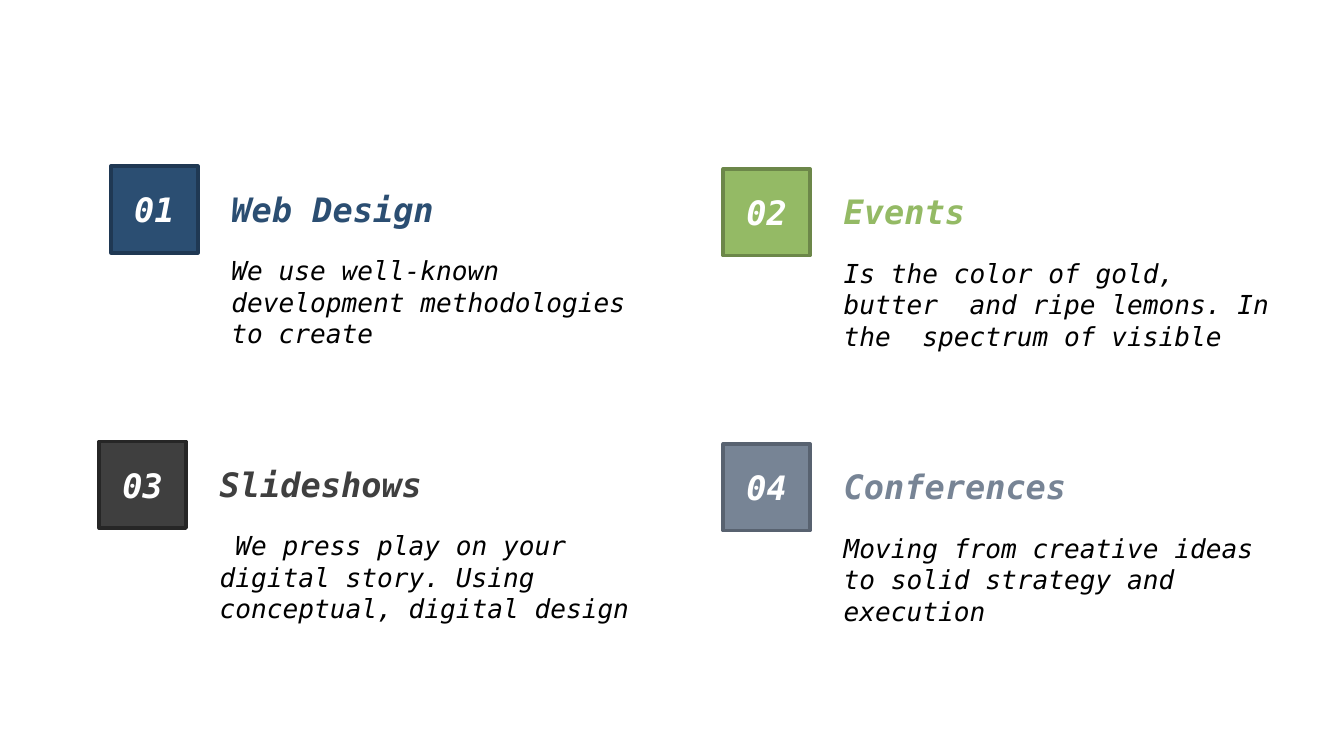
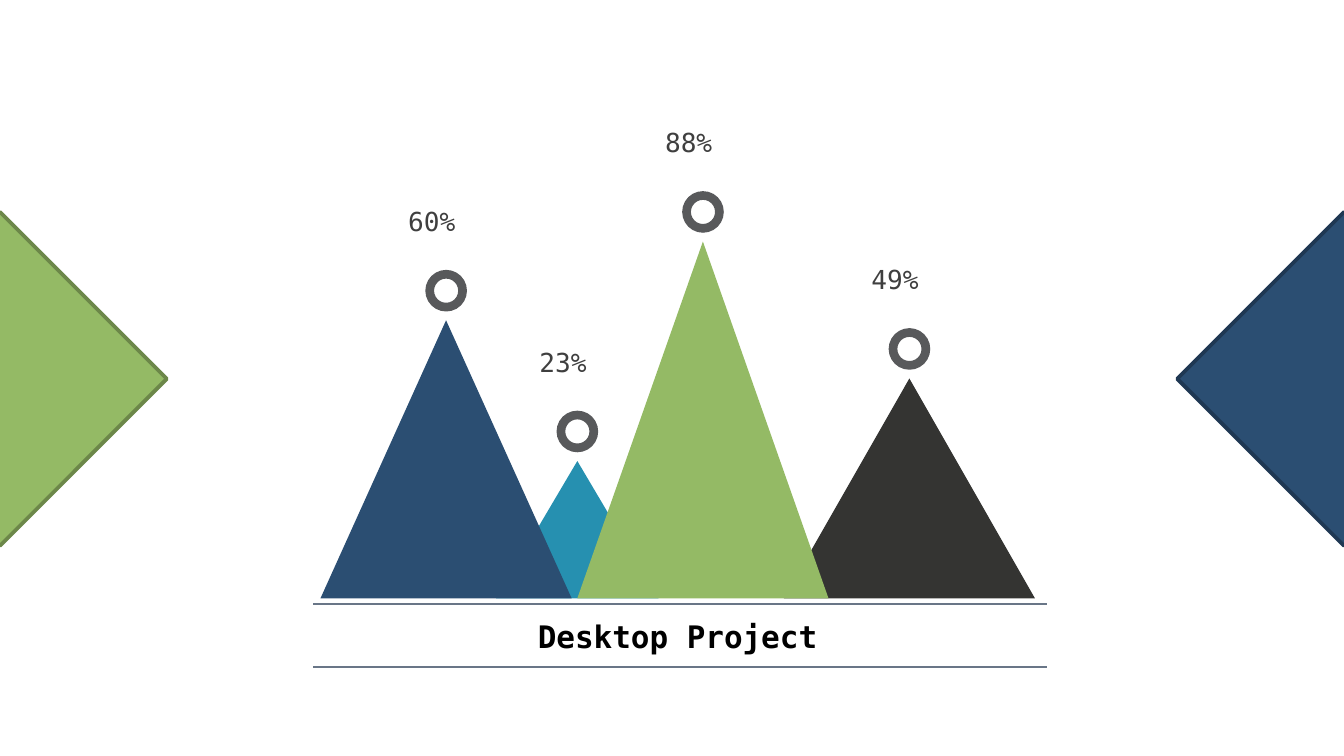
"""Build two slides: four numbered service cards and a peak diagram."""
import dataclasses

import pptx
import pptx.dml.color
import pptx.enum.shapes
import pptx.enum.text
import pptx.oxml.ns
import pptx.util
from lxml import etree

Pt = pptx.util.Pt
MSO_SHAPE = pptx.enum.shapes.MSO_SHAPE
MSO_ANCHOR = pptx.enum.text.MSO_ANCHOR
PP_ALIGN = pptx.enum.text.PP_ALIGN


@dataclasses.dataclass(frozen=True)
class Theme:
    font: str = "DejaVu Sans Mono"
    white: str = "FFFFFF"
    black: str = "000000"
    navy: str = "2B4E72"
    navy_edge: str = "1F3853"
    green: str = "94BA65"
    green_edge: str = "6C8749"
    gray: str = "3F3F3F"
    gray_edge: str = "262626"
    slate: str = "778495"
    slate_edge: str = "586270"
    teal: str = "2690B0"
    charcoal: str = "343432"
    ring: str = "58595B"
    rule: str = "697687"
    heading: float = 18
    caption: float = 16.6
    body: float = 14


def rgb(color):
    return pptx.dml.color.RGBColor.from_string(color)


def write(tf, text, font, size, color, bold=False, italic=False,
          align=PP_ALIGN.LEFT, anchor=MSO_ANCHOR.TOP, spacing=None):
    tf.word_wrap = True
    tf.vertical_anchor = anchor
    p = tf.paragraphs[0]
    p.alignment = align
    p.line_spacing = spacing
    r = p.add_run()
    r.text = text
    r.font.name = font
    r.font.size = Pt(size)
    r.font.color.rgb = rgb(color)
    r.font.bold = bold
    r.font.italic = italic


class Deck:
    def __init__(self, theme):
        self.theme = theme
        self.prs = pptx.Presentation()
        self.prs.slide_width = Pt(720)
        self.prs.slide_height = Pt(405)
        self.s = None

    def slide(self):
        self.s = self.prs.slides.add_slide(self.prs.slide_layouts[6])

    def shape(self, kind, x, y, w, h, fill, edge=None):
        sp = self.s.shapes.add_shape(kind, Pt(x), Pt(y), Pt(w), Pt(h))
        sp.shadow.inherit = False
        sp.fill.solid()
        sp.fill.fore_color.rgb = rgb(fill)
        if edge:
            sp.line.color.rgb = rgb(edge)
            sp.line.width = Pt(2)
        else:
            sp.line.fill.background()
        return sp

    def text(self, x, y, w, h, text, size, color, **fmt):
        sp = self.s.shapes.add_textbox(Pt(x), Pt(y), Pt(w), Pt(h))
        write(sp.text_frame, text, self.theme.font, size, color, **fmt)

    def rule(self, x1, x2, y):
        sp = self.s.shapes.add_connector(
            pptx.enum.shapes.MSO_CONNECTOR.STRAIGHT, Pt(x1), Pt(y), Pt(x2), Pt(y))
        sp.line.color.rgb = rgb(self.theme.rule)
        sp.line.width = Pt(1)
        etree.SubElement(sp._element.spPr, pptx.oxml.ns.qn("a:effectLst"))

    def card(self, x, y, number, title, body, lines, color, edge):
        t = self.theme
        sp = self.shape(MSO_SHAPE.RECTANGLE, x, y, 46.4, 46.4, color, edge)
        write(sp.text_frame, number, t.font, t.heading, t.white, bold=True,
              italic=True, align=PP_ALIGN.CENTER, anchor=MSO_ANCHOR.MIDDLE)
        self.text(x + 57.4, y + 8.4, 215, 29, title, t.heading, color,
                  bold=True, italic=True)
        self.text(x + 57.4, y + 43.8, 249, 7.2 + 17 * lines, body, t.body,
                  t.black, italic=True)

    def peak(self, cx, top, base, width, label, color):
        t, ring = self.theme, 22.3
        self.text(cx - 27.4, top - 65, 55, 29, label, t.body, t.gray)
        sp = self.shape(MSO_SHAPE.DONUT, cx - ring / 2, top - 27, ring, ring, t.ring)
        sp.adjustments[0] = 0.21
        self.shape(MSO_SHAPE.ISOSCELES_TRIANGLE, cx - width / 2, top, width,
                   base - top, color)

    def diamond(self, cx, cy, side, color, edge):
        sp = self.shape(MSO_SHAPE.RECTANGLE, cx - side / 2, cy - side / 2,
                        side, side, color, edge)
        sp.rotation = 45


def services(deck):
    t = deck.theme
    deck.slide()
    deck.card(59.5, 89, "01", "Web Design",
              "We use well-known development methodologies to create",
              2, t.navy, t.navy_edge)
    deck.card(387.5, 90.5, "02", "Events",
              "Is the color of gold, butter  and ripe lemons. In the  spectrum of visible",
              3, t.green, t.green_edge)
    deck.card(53.2, 236.5, "03", "Slideshows",
              " We press play on your digital story. Using conceptual, digital design",
              3, t.gray, t.gray_edge)
    deck.card(387.5, 237.8, "04", "Conferences",
              "Moving from creative ideas to solid strategy and execution",
              2, t.slate, t.slate_edge)


def project(deck):
    t = deck.theme
    deck.slide()
    for cx, top, width, label, color in (
            (309.3, 247, 87, "23%", t.teal),
            (487.2, 202.8, 134.6, "49%", t.charcoal),
            (239, 171.6, 134.6, "60%", t.navy),
            (376.6, 129.4, 134.6, "88%", t.green)):
        deck.peak(cx, top, 320.6, width, label, color)
    deck.text(171.4, 329, 383, 26.6, "Desktop Project", t.caption, t.black,
              bold=True, align=PP_ALIGN.CENTER, anchor=MSO_ANCHOR.MIDDLE,
              spacing=0.9)
    for y in (357.2, 323.4):
        deck.rule(167.8, 560.9, y)
    deck.diamond(0, 203, 126.4, t.green, t.green_edge)
    deck.diamond(720, 203, 126.4, t.navy, t.navy_edge)


def main():
    deck = Deck(Theme())
    services(deck)
    project(deck)
    deck.prs.save("out.pptx")


if __name__ == "__main__":
    main()
